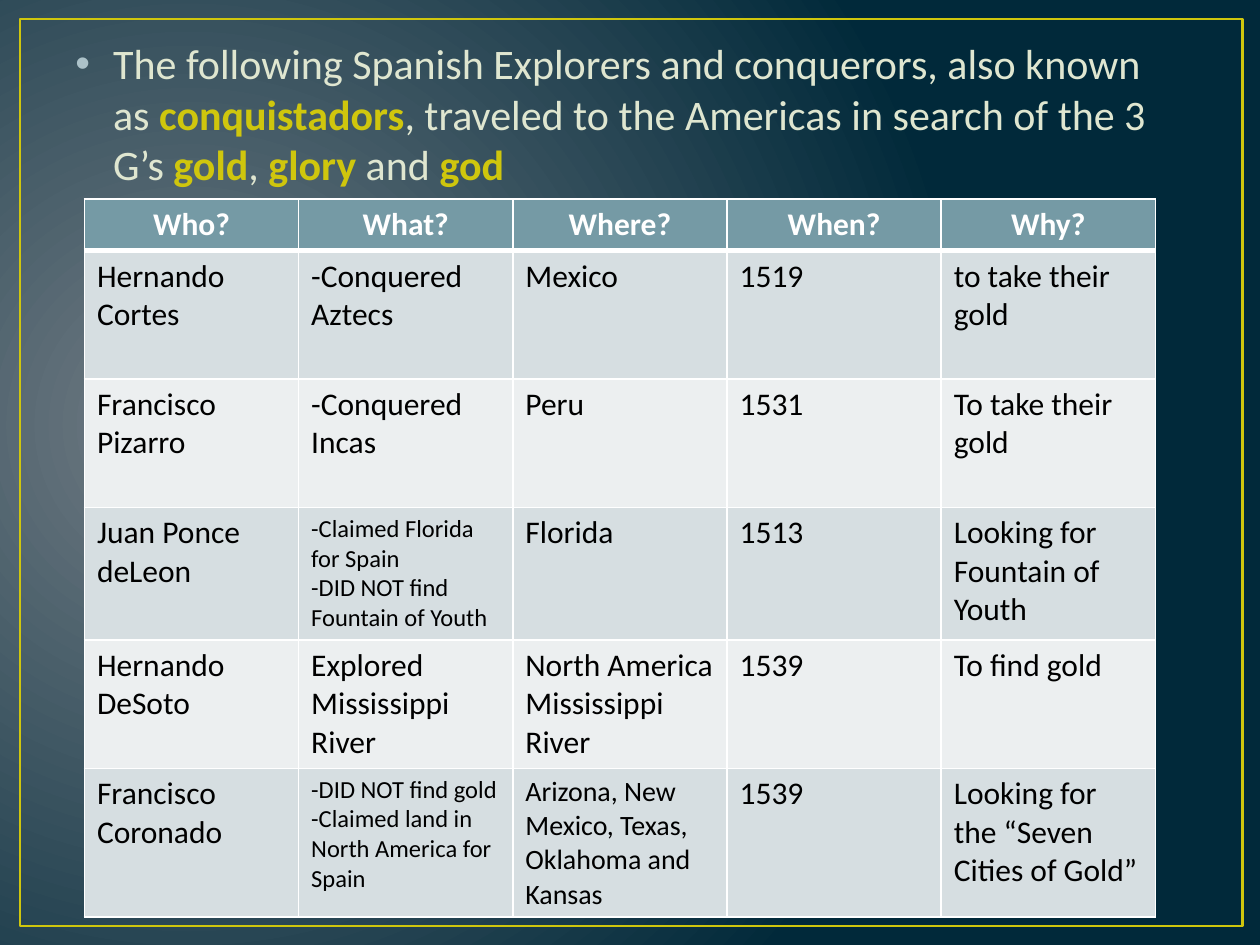
from dataclasses import dataclass

from lxml.etree import SubElement
from pptx import Presentation
from pptx.dml.color import RGBColor
from pptx.enum.shapes import MSO_SHAPE
from pptx.enum.text import PP_ALIGN
from pptx.oxml.ns import qn
from pptx.util import Inches, Pt


@dataclass(frozen=True)
class Theme:
    """Colours, font and type sizes of the slide."""
    font: str = "Calibri"
    glow: str = "717C84"
    navy: str = "01293A"
    accent: str = "CFC60D"
    body: str = "DFE6D0"
    bullet: str = "ACC2C9"
    header: str = "759AA5"
    bands: tuple = ("D6DEE1", "ECEFF0")
    white: str = "FFFFFF"
    black: str = "000000"
    body_size: int = 24
    cell_size: int = 18
    medium_size: int = 16
    small_size: int = 14


THEME = Theme()

INTRO = [
    ("The following Spanish Explorers and conquerors, also known as ", False),
    ("conquistadors", True),
    (", traveled to the Americas in search of the 3 G’s ", False),
    ("gold", True),
    (", ", False),
    ("glory ", True),
    ("and ", False),
    ("god", True),
]

ROWS = [
    ["Who?", "What?", "Where?", "When?", "Why?"],
    ["Hernando Cortes", "-Conquered Aztecs", "Mexico", "1519", "to take their gold"],
    ["Francisco Pizarro", "-Conquered Incas", "Peru", "1531", "To take their gold"],
    ["Juan Ponce deLeon",
     "-Claimed Florida for Spain\n-DID NOT find Fountain of Youth",
     "Florida", "1513", "Looking for Fountain of Youth"],
    ["Hernando DeSoto", "Explored Mississippi River",
     "North America Mississippi River", "1539", "To find gold"],
    ["Francisco Coronado",
     "-DID NOT find gold\n-Claimed land in North America for Spain",
     "Arizona, New Mexico, Texas, Oklahoma and Kansas", "1539",
     "Looking for the “Seven Cities of Gold”"],
]
ROW_HEIGHTS = [0.41, 1.02, 1.02, 1.05, 1.02, 1.18]
COLUMN_WIDTH = 1.7
CELL_SIZES = {(3, 1): THEME.small_size, (5, 1): THEME.small_size,
              (5, 2): THEME.medium_size}


def set_font(font, color, **formats):
    """Apply the theme font, a colour and further format values."""
    for name, value in {"name": THEME.font, **formats}.items():
        setattr(font, name, value)
    font.color.rgb = RGBColor.from_string(color)


def set_background(s):
    """Fill the background with a circular gradient."""
    fill = s.background.fill
    fill.gradient()
    for stop, color in zip(fill.gradient_stops, (THEME.glow, THEME.navy)):
        stop.color.rgb = RGBColor.from_string(color)
    grad = s.element.find(".//" + qn("a:gradFill"))
    grad.remove(grad.find(qn("a:lin")))
    circle = SubElement(grad, qn("a:path"), path="circle")
    SubElement(circle, qn("a:fillToRect"), l="15000", t="50000", r="85000", b="60000")


def add_frame(s):
    """Draw the thin border around the slide."""
    sp = s.shapes.add_shape(MSO_SHAPE.RECTANGLE, Inches(0.16), Inches(0.15),
                            Inches(9.7), Inches(7.2))
    sp.shadow.inherit = False
    sp.fill.background()
    sp.line.color.rgb = RGBColor.from_string(THEME.accent)
    sp.line.width = Pt(1.5)


def add_bullet(p):
    """Give a paragraph a hanging round bullet."""
    pPr = p._p.get_or_add_pPr()
    pPr.set("marL", str(Inches(0.3)))
    pPr.set("indent", str(-Inches(0.3)))
    color = SubElement(pPr, qn("a:buClr"))
    SubElement(color, qn("a:srgbClr"), val=THEME.bullet)
    SubElement(pPr, qn("a:buFont"), typeface="Arial")
    SubElement(pPr, qn("a:buChar"), char="•")


def add_intro(s):
    """Write the bulleted sentence with highlighted key words."""
    sp = s.shapes.add_textbox(Inches(0.5), Inches(0.25), Inches(9), Inches(6.2))
    tf = sp.text_frame
    tf.word_wrap = True
    p = tf.paragraphs[0]
    add_bullet(p)
    for text, key in INTRO:
        r = p.add_run()
        r.text = text
        set_font(r.font, THEME.accent if key else THEME.body,
                 size=Pt(THEME.body_size), bold=key)


def set_borders(cell, **widths):
    """Draw white cell borders, one point unless given by side."""
    tcPr = cell._tc.get_or_add_tcPr()
    for side in "LRTB":
        ln = SubElement(tcPr, qn(f"a:ln{side}"), w=str(Pt(widths.get(side, 1))))
        fill = SubElement(ln, qn("a:solidFill"))
        SubElement(fill, qn("a:srgbClr"), val=THEME.white)


def fill_cell(cell, text, row, size):
    """Write and style one table cell."""
    is_header = row == 0
    set_borders(cell, **{0: {"B": 3}, 1: {"T": 3}}.get(row, {}))
    cell.fill.solid()
    color = THEME.header if is_header else THEME.bands[(row - 1) % 2]
    cell.fill.fore_color.rgb = RGBColor.from_string(color)
    cell.text = text
    for p in cell.text_frame.paragraphs:
        p.alignment = PP_ALIGN.CENTER if is_header else PP_ALIGN.LEFT
        for r in p.runs:
            set_font(r.font, THEME.white if is_header else THEME.black,
                     size=Pt(size), bold=is_header)


def add_explorers(s):
    """Build the table of explorers."""
    columns = len(ROWS[0])
    table = s.shapes.add_table(len(ROWS), columns, Inches(0.67), Inches(1.58),
                               Inches(COLUMN_WIDTH * columns),
                               Inches(sum(ROW_HEIGHTS))).table
    for column in table.columns:
        column.width = Inches(COLUMN_WIDTH)
    for i, (texts, height) in enumerate(zip(ROWS, ROW_HEIGHTS)):
        table.rows[i].height = Inches(height)
        for j, text in enumerate(texts):
            fill_cell(table.cell(i, j), text, i, CELL_SIZES.get((i, j), THEME.cell_size))


def main():
    """Build and save the slide."""
    prs = Presentation()
    prs.slide_width, prs.slide_height = Inches(10), Inches(7.5)
    s = prs.slides.add_slide(prs.slide_layouts[6])
    set_background(s)
    add_frame(s)
    add_intro(s)
    add_explorers(s)
    prs.save("out.pptx")


if __name__ == "__main__":
    main()
